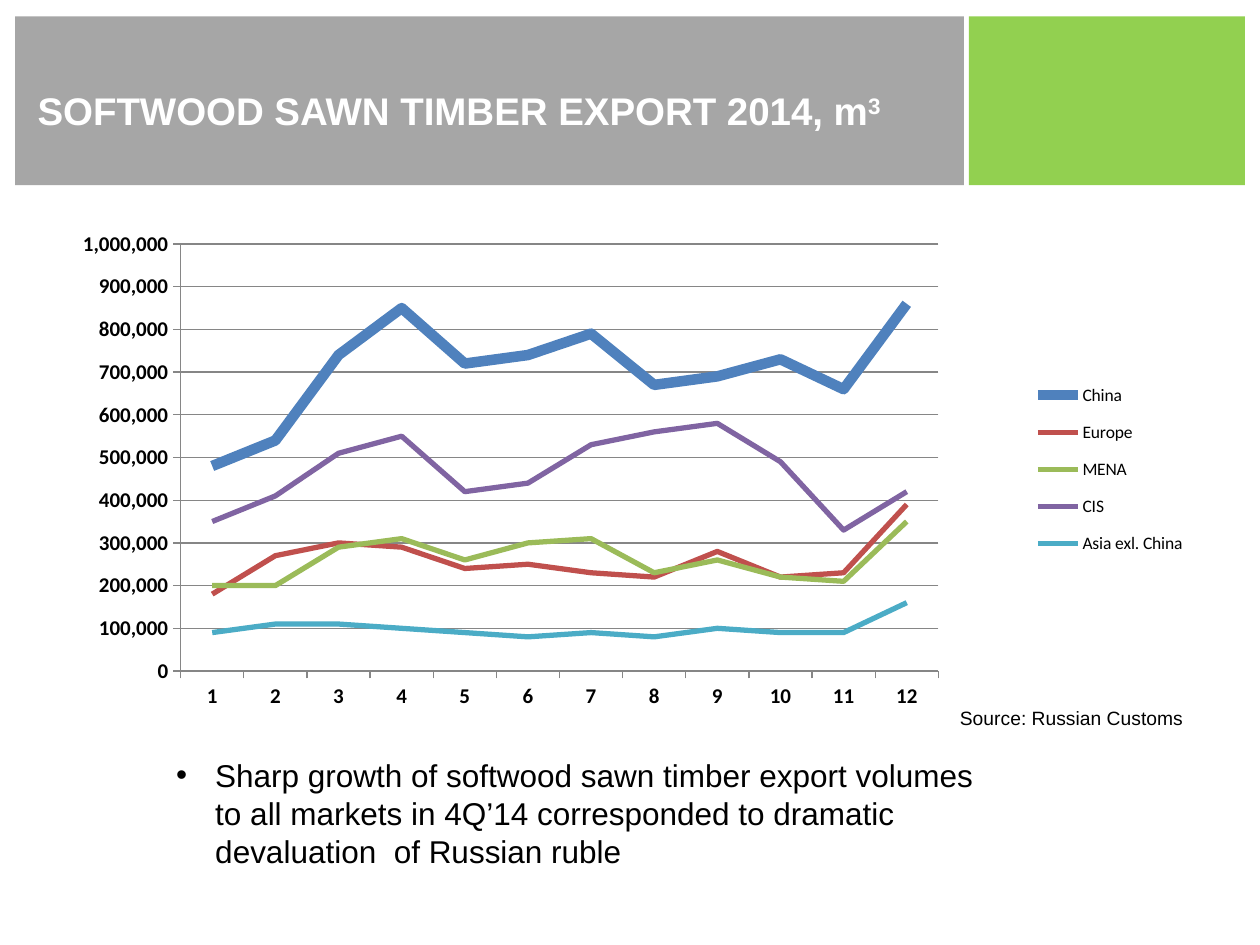
from lxml.etree import SubElement
from pptx import Presentation
from pptx.chart.data import CategoryChartData
from pptx.dml.color import RGBColor
from pptx.enum.chart import XL_CHART_TYPE as ChartType, XL_LEGEND_POSITION as LegendPosition
from pptx.enum.chart import XL_MARKER_STYLE as Marker, XL_TICK_MARK as Tick
from pptx.enum.shapes import MSO_SHAPE as Shape
from pptx.enum.text import MSO_ANCHOR as Anchor
from pptx.oxml import parse_xml
from pptx.oxml.ns import nsdecls, qn
from pptx.util import Inches, Pt

# Content
TITLE = "SOFTWOOD SAWN TIMBER EXPORT 2014, m"
TITLE_POWER = "3"
SOURCE = "Source: Russian Customs"
COMMENT = ("Sharp growth of softwood sawn timber export volumes to all markets "
           "in 4Q’14 corresponded to dramatic devaluation  of Russian ruble")
MONTHS = [str(month) for month in range(1, 13)]
EXPORTS = {  # thousand cubic metres a month
    "China": (480, 540, 740, 850, 720, 740, 790, 670, 690, 730, 660, 860),
    "Europe": (180, 270, 300, 290, 240, 250, 230, 220, 280, 220, 230, 390),
    "MENA": (200, 200, 290, 310, 260, 300, 310, 230, 260, 220, 210, 350),
    "CIS": (350, 410, 510, 550, 420, 440, 530, 560, 580, 490, 330, 420),
    "Asia exl. China": (90, 110, 110, 100, 90, 80, 90, 80, 100, 90, 90, 160),
}
COLORS = {
    "band": "A6A6A6", "accent": "92D050", "title": "FFFFFF", "text": "000000", "grid": "868686",
    "China": "4F81BD", "Europe": "C0504D", "MENA": "9BBB59", "CIS": "8064A2",
    "Asia exl. China": "4BACC6",
}
LINE_WIDTHS = {"China": 6}
DEFAULT_LINE_WIDTH = 3

# Places as left, top, width, height in inches
WIDTH, HEIGHT = 10, 7.5
MARGIN, GAP, BAND_TOP, BAND_HEIGHT = 0.12, 0.04, 0.13, 1.34
BAND_WIDTH = 7.53
ACCENT_LEFT = MARGIN + BAND_WIDTH + GAP
BANDS = {
    "band": (MARGIN, BAND_TOP, BAND_WIDTH, BAND_HEIGHT),
    "accent": (ACCENT_LEFT, BAND_TOP, WIDTH - MARGIN - ACCENT_LEFT, BAND_HEIGHT),
}
TITLE_BOX = (0.2, 0.21, 7.32, 1.18)
CHART_BOX = (0.43, 1.49, 9.21, 4.34)
COMMENT_BOX = (1.3, 5.95, 6.69, 1.01)
SOURCE_BOX = (7.52, 5.56, 1.98, 0.29)
# Shares of the chart
PLOT_SHARE = (0.109, 0.103, 0.653, 0.781)
LEGEND_SHARE = (0.83, 0.33, 0.16, 0.37)


def color(name):
    return RGBColor.from_string(COLORS[name])


def place(box):
    return [Inches(value) for value in box]


def set_font(font, color_name, **values):
    for name, value in values.items():
        setattr(font, name, value)
    font.color.rgb = color(color_name)


def add_text(slide, box, text, color_name, wrap=True, **font_values):
    shape = slide.shapes.add_textbox(*place(box))
    shape.text_frame.word_wrap = wrap
    run = shape.text_frame.paragraphs[0].add_run()
    run.text = text
    set_font(run.font, color_name, name="Arial", **font_values)
    return shape.text_frame


def make_layout(shares, inner=False):
    layout = parse_xml(f"<c:layout {nsdecls('c')}><c:manualLayout/></c:layout>")
    settings = [("layoutTarget", "inner")] if inner else []
    settings += [("xMode", "edge"), ("yMode", "edge"), *zip("xywh", shares)]
    for tag, value in settings:
        SubElement(layout[0], qn(f"c:{tag}")).set("val", str(value))
    return layout


def add_bands(slide):
    group = slide.shapes.add_group_shape()
    for name, box in BANDS.items():
        shape = group.shapes.add_shape(Shape.RECTANGLE, *place(box))
        shape.shadow.inherit = False
        shape.fill.solid()
        shape.fill.fore_color.rgb = color(name)
        shape.line.fill.background()


def add_export_chart(slide):
    data = CategoryChartData(number_format="#,##0")
    data.categories = MONTHS
    for name, values in EXPORTS.items():
        data.add_series(name, [value * 1000 for value in values])
    chart = slide.shapes.add_chart(ChartType.LINE, *place(CHART_BOX), data).chart
    chart.has_title = False
    set_font(chart.font, "text", name="Calibri", size=Pt(10))

    # Lines
    chart.plots[0].vary_by_categories = False
    for series in chart.plots[0].series:
        series.smooth = False
        series.marker.style = Marker.NONE
        series.format.line.width = Pt(LINE_WIDTHS.get(series.name, DEFAULT_LINE_WIDTH))
        series.format.line.color.rgb = color(series.name)

    # Axes
    value_axis = chart.value_axis
    value_axis.minimum_scale, value_axis.maximum_scale = 0, 1_000_000
    value_axis.major_unit = 100_000
    value_axis.has_major_gridlines = True
    value_axis.tick_labels.number_format = "#,##0"
    value_axis.tick_labels.number_format_is_linked = False
    for axis in (chart.category_axis, value_axis):
        axis.major_tick_mark, axis.minor_tick_mark = Tick.OUTSIDE, Tick.NONE
        set_font(axis.tick_labels.font, "text", name="Calibri", size=Pt(12), bold=True)
    for part in (chart.category_axis, value_axis, value_axis.major_gridlines):
        part.format.line.color.rgb = color("grid")
        part.format.line.width = Pt(0.75)

    # Legend and plot area
    chart.has_legend = True
    chart.legend.position = LegendPosition.RIGHT
    chart.legend.include_in_layout = False
    set_font(chart.legend.font, "text", name="Calibri", size=Pt(10))
    areas = [(chart.legend._element, 1, make_layout(LEGEND_SHARE)),
             (chart._chartSpace.find(".//" + qn("c:plotArea")), 0, make_layout(PLOT_SHARE, True))]
    for area, position, layout in areas:
        for old_layout in area.findall(qn("c:layout")):
            area.remove(old_layout)
        area.insert(position, layout)


def add_title(slide):
    frame = add_text(slide, TITLE_BOX, TITLE, "title", size=Pt(22), bold=True)
    frame.vertical_anchor = Anchor.MIDDLE
    frame.margin_top = Inches(0.2)
    power = frame.paragraphs[0].add_run()
    power.text = TITLE_POWER
    set_font(power.font, "title", name="Arial", size=Pt(22), bold=True)
    power._r.get_or_add_rPr().set("baseline", "30000")


def add_comment(slide):
    frame = add_text(slide, COMMENT_BOX, COMMENT, "text", size=Pt(18))
    properties = frame.paragraphs[0]._p.get_or_add_pPr()
    indent = Inches(0.31)
    properties.set("marL", str(indent))
    properties.set("indent", str(-indent))
    SubElement(properties, qn("a:buFont")).set("typeface", "Arial")
    SubElement(properties, qn("a:buChar")).set("char", "•")


def main():
    presentation = Presentation()
    presentation.slide_width, presentation.slide_height = Inches(WIDTH), Inches(HEIGHT)
    slide = presentation.slides.add_slide(presentation.slide_layouts[6])
    add_bands(slide)
    add_export_chart(slide)
    add_title(slide)
    add_comment(slide)
    add_text(slide, SOURCE_BOX, SOURCE, "text", wrap=False, size=Pt(11))
    presentation.save("out.pptx")


if __name__ == "__main__":
    main()
